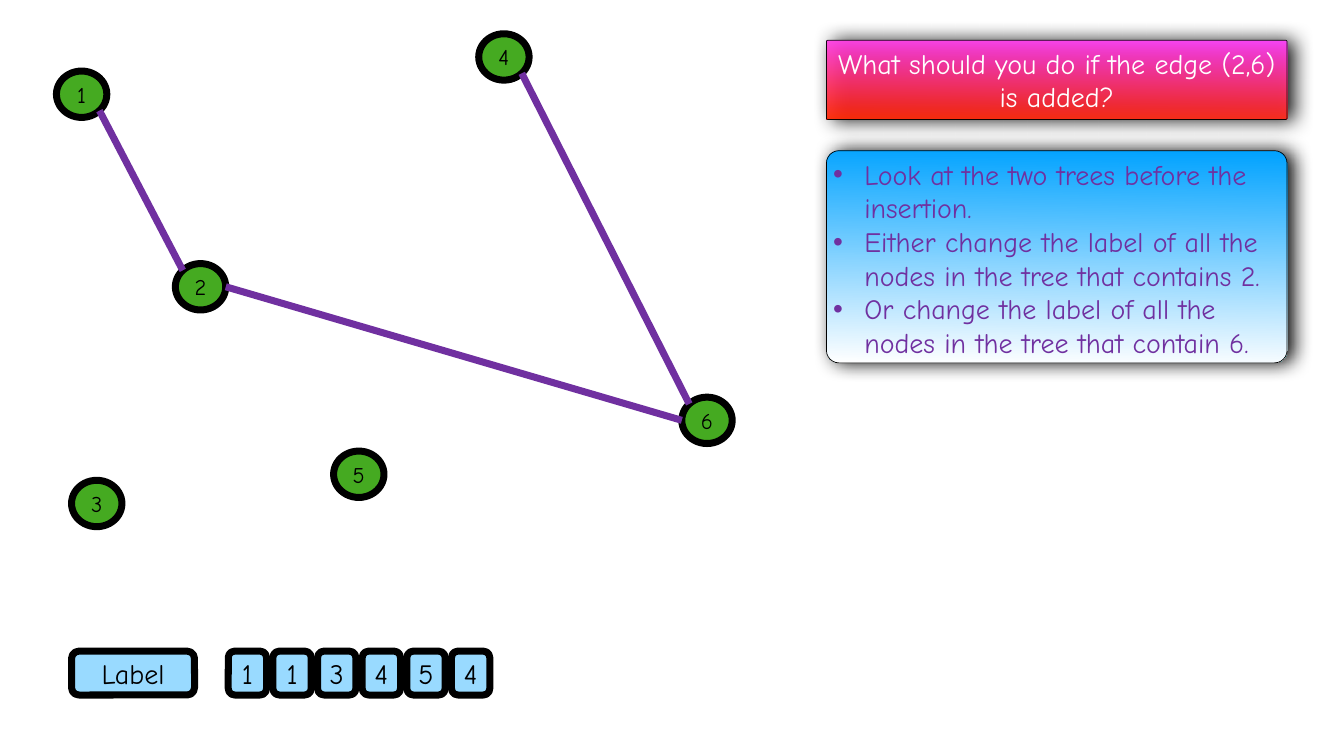
from math import sqrt

from lxml.etree import SubElement
from pptx import Presentation
from pptx.dml.color import RGBColor
from pptx.enum.shapes import MSO_CONNECTOR, MSO_SHAPE
from pptx.enum.text import MSO_ANCHOR, MSO_AUTO_SIZE, PP_ALIGN
from pptx.oxml.ns import qn
from pptx.util import Inches, Pt

FONT = "Comic Neue"
COLORS = {
    "black": "000000", "white": "FFFFFF", "node": "45AA21", "cell": "99DAFF",
    "edge": "7030A0", "pink": "FF40FF", "red": "FF2600", "blue": "00A2FF",
}
NODE_W, NODE_H = 1, 0.92
NODES = {  # node number: left, top
    1: (1.12, 1.41), 2: (3.48, 5.23), 3: (1.42, 9.53),
    4: (9.5, 0.67), 5: (6.62, 8.95), 6: (13.53, 7.88),
}
DIAG = sqrt(0.5)
BOTTOM_RIGHT, TOP_LEFT, LEFT, RIGHT = (DIAG, DIAG), (-DIAG, -DIAG), (-1, 0), (1, 0)
EDGES = [
    (2, TOP_LEFT, 1, BOTTOM_RIGHT),
    (6, TOP_LEFT, 4, BOTTOM_RIGHT),
    (6, LEFT, 2, RIGHT),
]
LABELS = [1, 1, 3, 4, 5, 4]
QUESTION = "What should you do if the edge (2,6) is added?"
ANSWERS = [
    "Look at the two trees before the insertion.",
    "Either change the label of all the nodes in the tree that contains 2.",
    "Or change the label of all the nodes in the tree that contain 6.",
]


def rgb(name):
    return RGBColor.from_string(COLORS[name])


def add_box(slide, kind, box, lines, size, color="black", align=PP_ALIGN.CENTER,
            line_width=10):
    s = slide.shapes.add_shape(kind, *map(Inches, box))
    s.shadow.inherit = False
    s.line.color.rgb = rgb("black")
    s.line.width = Pt(line_width)
    tf = s.text_frame
    tf.word_wrap = True
    tf.vertical_anchor = MSO_ANCHOR.MIDDLE
    tf.margin_left = tf.margin_right = tf.margin_top = tf.margin_bottom = Inches(0.06)
    tf.text = "\n".join(lines)
    for p in tf.paragraphs:
        p.alignment = align
        p.font.name = FONT
        p.font.size = Pt(size)
        p.font.color.rgb = rgb(color)
    return s


def add_solid_box(slide, kind, box, text, size, fill):
    s = add_box(slide, kind, box, [str(text)], size)
    s.fill.solid()
    s.fill.fore_color.rgb = rgb(fill)
    s.text_frame.auto_size = MSO_AUTO_SIZE.SHAPE_TO_FIT_TEXT


def add_panel(slide, box, lines, corner, colors, text_color, align, opacity=100):
    """Rounded box with a vertical gradient and a soft shadow."""
    s = add_box(slide, MSO_SHAPE.ROUNDED_RECTANGLE, box, lines, 40, text_color, align, 1)
    s.adjustments[0] = corner
    s.fill.gradient()
    s.fill.gradient_angle = 269
    for stop, position, name in zip(s.fill.gradient_stops, (0, 1), colors):
        stop.position = position
        stop.color.rgb = rgb(name)
    spPr = s.fill._xPr
    if opacity < 100:
        for color in spPr.iter(qn("a:srgbClr")):
            SubElement(color, qn("a:alpha"), val=str(opacity * 1000))
    shadow = SubElement(spPr.find(qn("a:effectLst")), qn("a:outerShdw"),
                        blurRad=str(Pt(28)), dist=str(Pt(9)), dir="0", rotWithShape="0")
    color = SubElement(shadow, qn("a:srgbClr"), val=COLORS["black"])
    SubElement(color, qn("a:alpha"), val="97000")
    return s


def rim_point(node, direction):
    left, top = NODES[node]
    return (Inches(left + NODE_W / 2 * (1 + direction[0])),
            Inches(top + NODE_H / 2 * (1 + direction[1])))


def draw_graph(slide):
    for number, (left, top) in NODES.items():
        add_solid_box(slide, MSO_SHAPE.OVAL, (left, top, NODE_W, NODE_H), number, 32, "node")
    for start, start_side, end, end_side in EDGES:
        edge = slide.shapes.add_connector(MSO_CONNECTOR.STRAIGHT,
                                          *rim_point(start, start_side),
                                          *rim_point(end, end_side))
        edge.line.color.rgb = rgb("edge")
        edge.line.width = Pt(10)
        SubElement(edge._element.spPr, qn("a:effectLst"))


def draw_label_row(slide, left, top, height):
    kind = MSO_SHAPE.ROUNDED_RECTANGLE
    add_solid_box(slide, kind, (left, top, 2.44, height), "Label", 40, "cell")
    for i, label in enumerate(LABELS):
        box = (left + 3.11 + i * 0.886, top, 0.76, height)
        add_solid_box(slide, kind, box, label, 40, "cell")


def draw_discussion(slide, left, top, width):
    add_panel(slide, (left, top, width, 1.57), [QUESTION], 0.017, ("pink", "red"),
              "white", PP_ALIGN.CENTER, opacity=93)
    s = add_panel(slide, (left, top + 2.19, width, 4.21), ANSWERS, 0.059,
                  ("blue", "white"), "edge", PP_ALIGN.LEFT)
    s.text_frame.vertical_anchor = MSO_ANCHOR.TOP
    # Bullets with a hanging indent
    for p in s.text_frame.paragraphs:
        pPr = p._p.get_or_add_pPr()
        pPr.set("marL", str(Inches(0.62)))
        pPr.set("indent", str(Inches(-0.62)))
        bullet_font = pPr.makeelement(qn("a:buFont"), {"typeface": "Arial"})
        bullet = pPr.makeelement(qn("a:buChar"), {"char": "•"})
        pPr.insert(0, bullet_font)
        pPr.insert(1, bullet)


def main():
    prs = Presentation()
    prs.slide_width, prs.slide_height = Inches(26.67), Inches(15)
    slide = prs.slides.add_slide(prs.slide_layouts[6])
    draw_graph(slide)
    draw_label_row(slide, 1.42, 12.92, 0.87)
    draw_discussion(slide, 16.4, 0.8, 9.14)
    prs.save("out.pptx")


if __name__ == "__main__":
    main()
